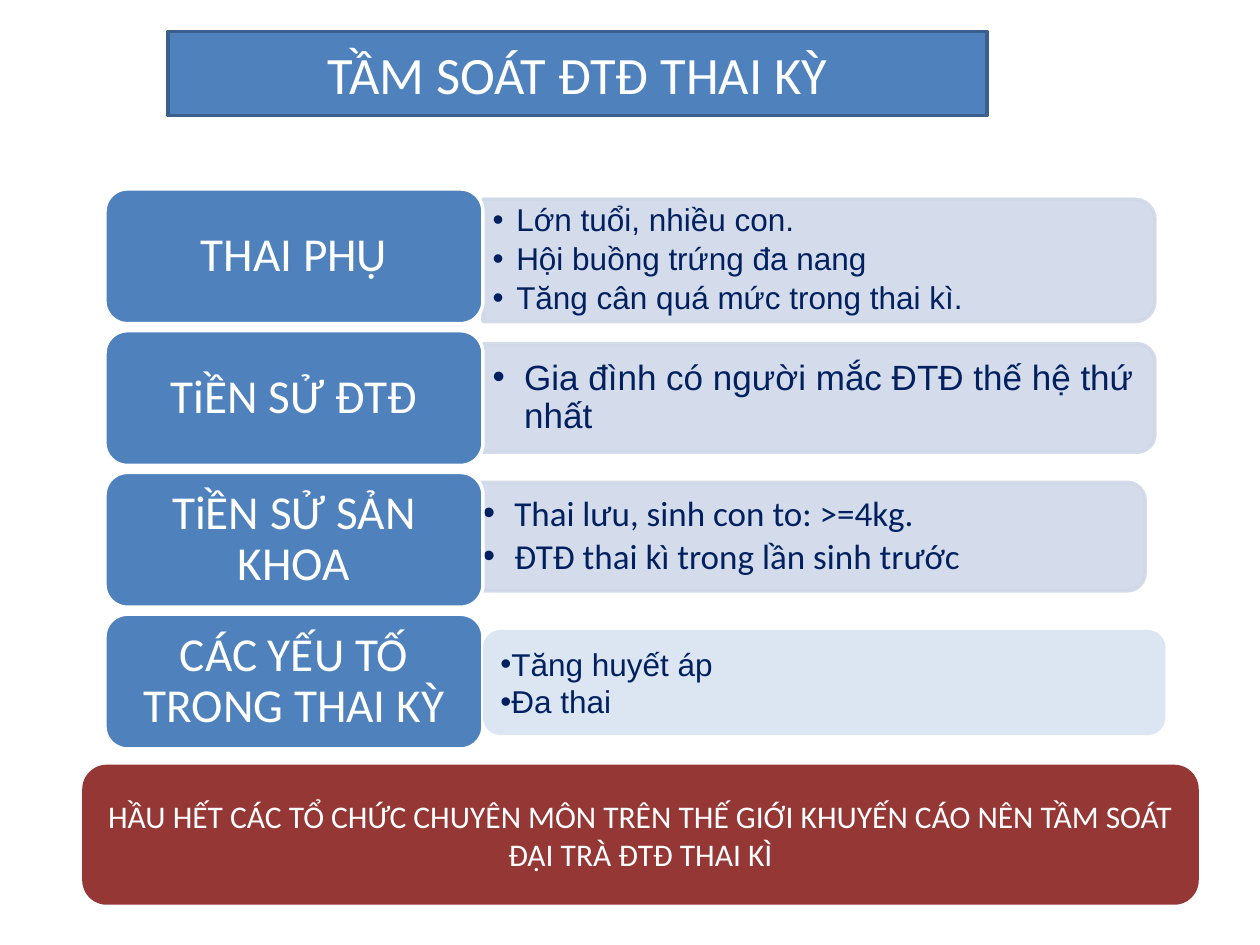
from lxml.etree import SubElement
from pptx import Presentation
from pptx.dml.color import RGBColor
from pptx.enum.shapes import MSO_SHAPE
from pptx.enum.text import MSO_ANCHOR, MSO_AUTO_SIZE, PP_ALIGN
from pptx.oxml.ns import qn
from pptx.util import Pt

BLUE, DARK_BLUE, PALE_BLUE, LIGHT_BLUE = "4F81BD", "3A5F8C", "D0D8E8", "DCE6F2"
NAVY, RED, WHITE = "002060", "953735", "FFFFFF"


def color(hex_text):
    return RGBColor.from_string(hex_text)


class ScreeningSlide:
    """Holds the slide and the style shared by its elements."""

    line_width = 2
    text_inset = (7.2, 3.6)

    def __init__(self, presentation):
        self.slide = presentation.slides.add_slide(presentation.slide_layouts[5])

    def paint(self, shape, fill, line=None, opacity=None):
        shape.fill.solid()
        shape.fill.fore_color.rgb = color(fill)
        if line:
            shape.line.width = Pt(self.line_width)
            shape.line.color.rgb = color(line)
        else:
            shape.line.fill.background()
        if opacity:
            for color_element in shape._element.spPr.iter(qn("a:srgbClr")):
                SubElement(color_element, qn("a:alpha"), val=str(opacity * 1000))

    def add_text(self, shape, lines, size, font, text_color, bullet_indent=None,
                 line_spacing=None, space_after=0, inset=None):
        """Fill a shape with centred lines, or bullets if an indent is given."""
        frame = shape.text_frame
        frame.word_wrap = True
        frame.auto_size = MSO_AUTO_SIZE.NONE
        frame.vertical_anchor = MSO_ANCHOR.MIDDLE
        horizontal, vertical = inset or self.text_inset
        frame.margin_left = frame.margin_right = Pt(horizontal)
        frame.margin_top = frame.margin_bottom = Pt(vertical)
        for index, text in enumerate(lines):
            paragraph = frame.add_paragraph() if index else frame.paragraphs[0]
            paragraph.alignment = PP_ALIGN.CENTER
            paragraph.space_after = Pt(space_after)
            if line_spacing:
                paragraph.line_spacing = line_spacing
            if bullet_indent is not None:
                paragraph.alignment = PP_ALIGN.LEFT
                self.add_bullet(paragraph, bullet_indent)
            run = paragraph.add_run()
            run.text = text
            run.font.size = Pt(size)
            run.font.name = font
            run.font.color.rgb = color(text_color)

    def add_bullet(self, paragraph, indent):
        properties = paragraph._p.get_or_add_pPr()
        properties.set("marL", str(Pt(indent)))
        properties.set("indent", str(-Pt(indent)))
        SubElement(properties, qn("a:buFont"), typeface="Arial")
        SubElement(properties, qn("a:buChar"), char="•")

    def title(self, text, left, top, width, height):
        title = self.slide.shapes.title
        title.left, title.top = Pt(left), Pt(top)
        title.width, title.height = Pt(width), Pt(height)
        geometry = SubElement(title._element.spPr, qn("a:prstGeom"), prst="roundRect")
        SubElement(geometry, qn("a:avLst"))
        self.paint(title, BLUE, DARK_BLUE)
        self.add_text(title, [text], 30, "Calibri", WHITE)

    def box(self, left, top, width, height, fill, line=None):
        shape = self.slide.shapes.add_shape(
            MSO_SHAPE.ROUNDED_RECTANGLE, Pt(left), Pt(top), Pt(width), Pt(height))
        shape.shadow.inherit = False
        self.paint(shape, fill, line)
        return shape

    def label(self, text, left, top, width, height):
        shape = self.box(left, top, width, height, BLUE, WHITE)
        self.add_text(shape, [text], 27, "Calibri", WHITE, line_spacing=0.9,
                      inset=(8, 4))

    def panel(self, lines, left, top, width, height, size, font, indent):
        # A quarter turn puts the two rounded corners on the right
        shape = self.slide.shapes.add_shape(
            MSO_SHAPE.ROUND_2_SAME_RECTANGLE,
            Pt(left + (width - height) / 2), Pt(top + (height - width) / 2),
            Pt(height), Pt(width))
        shape.rotation = 90
        shape.shadow.inherit = False
        self.paint(shape, PALE_BLUE, PALE_BLUE, opacity=90)
        text_box = self.slide.shapes.add_textbox(
            Pt(left), Pt(top + 3.5), Pt(width - 3), Pt(height - 7))
        self.add_text(text_box, lines, size, font, NAVY, indent,
                      line_spacing=0.9, space_after=3, inset=(5.5, 3))


def main():
    presentation = Presentation()
    presentation.slide_width, presentation.slide_height = Pt(720), Pt(540)
    screening = ScreeningSlide(presentation)

    # Title
    screening.title("TẦM SOÁT ĐTĐ THAI KỲ", 96, 18, 468, 48)

    # Risk groups: label, then panel (lines, left, top, height, size, font, indent)
    groups = [
        ("THAI PHỤ", (["Lớn tuổi, nhiều con.", "Hội buồng trứng đa nang",
                       "Tăng cân quá mức trong thai kì."],
                      276, 113.8, 70, 18, "Arial", 13.5)),
        ("TiỀN SỬ ĐTĐ", (["Gia đình có người mắc ĐTĐ thế hệ thứ nhất"],
                         276, 196.4, 62, 20, "Arial", 18)),
        ("TiỀN SỬ SẢN KHOA", (["Thai lưu, sinh con to: >=4kg.",
                               "ĐTĐ thai kì trong lần sinh trước"],
                              270.4, 275.6, 62, 20, "Calibri", 18)),
        ("CÁC YẾU TỐ TRONG THAI KỲ", None),
    ]
    for row, (label, panel) in enumerate(groups):
        if panel:
            lines, left, top, height, size, font, indent = panel
            screening.panel(lines, left, top, 384, height, size, font, indent)
        screening.label(label, 60, 108 + 81 * row, 216, 77)

    # Factors in the current pregnancy
    factors = screening.box(276, 360, 390, 60, LIGHT_BLUE)
    screening.add_text(factors, ["Tăng huyết áp", "Đa thai"], 18, "Arial", NAVY,
                       bullet_indent=0)

    # Recommendation
    recommendation = screening.box(48, 438, 636, 78, RED, RED)
    screening.add_text(
        recommendation,
        ["HẦU HẾT CÁC TỔ CHỨC CHUYÊN MÔN TRÊN THẾ GIỚI KHUYẾN CÁO NÊN TẦM SOÁT "
         "ĐẠI TRÀ ĐTĐ THAI KÌ"], 18, "Calibri", WHITE)

    presentation.save("out.pptx")


if __name__ == "__main__":
    main()
